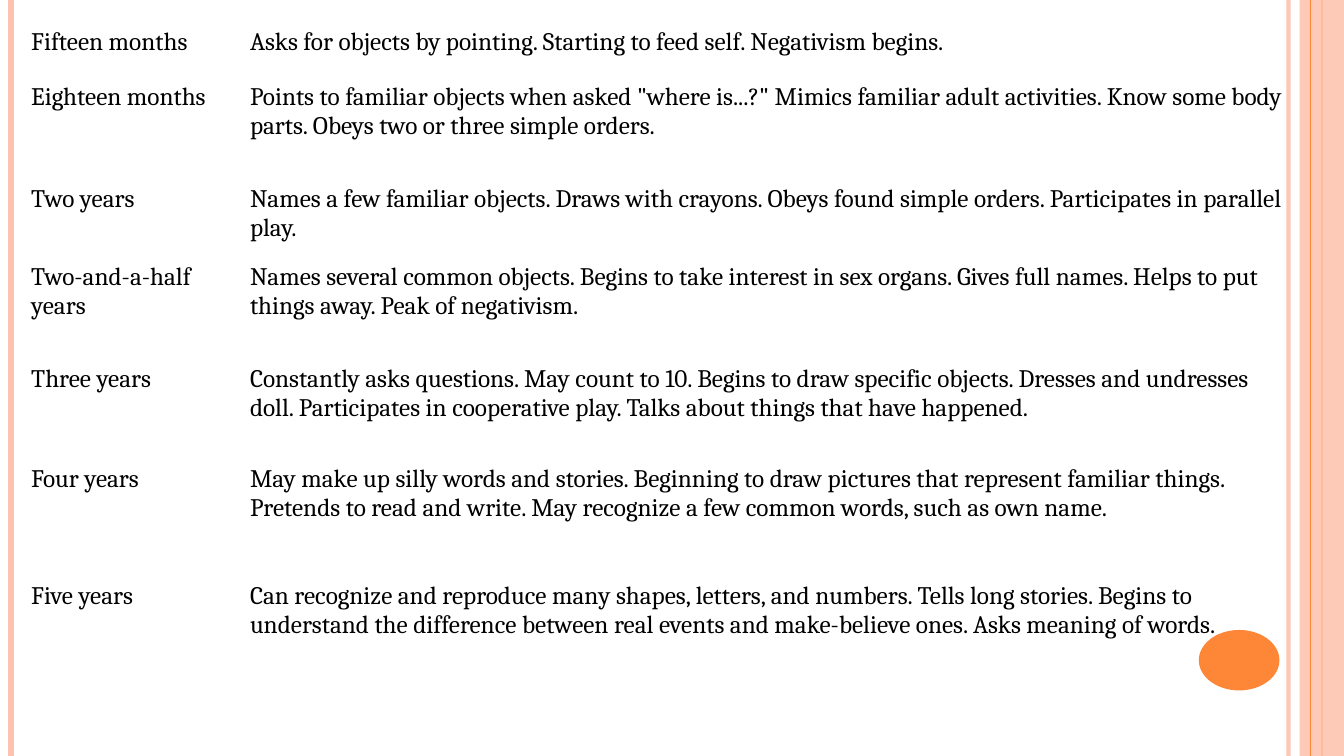
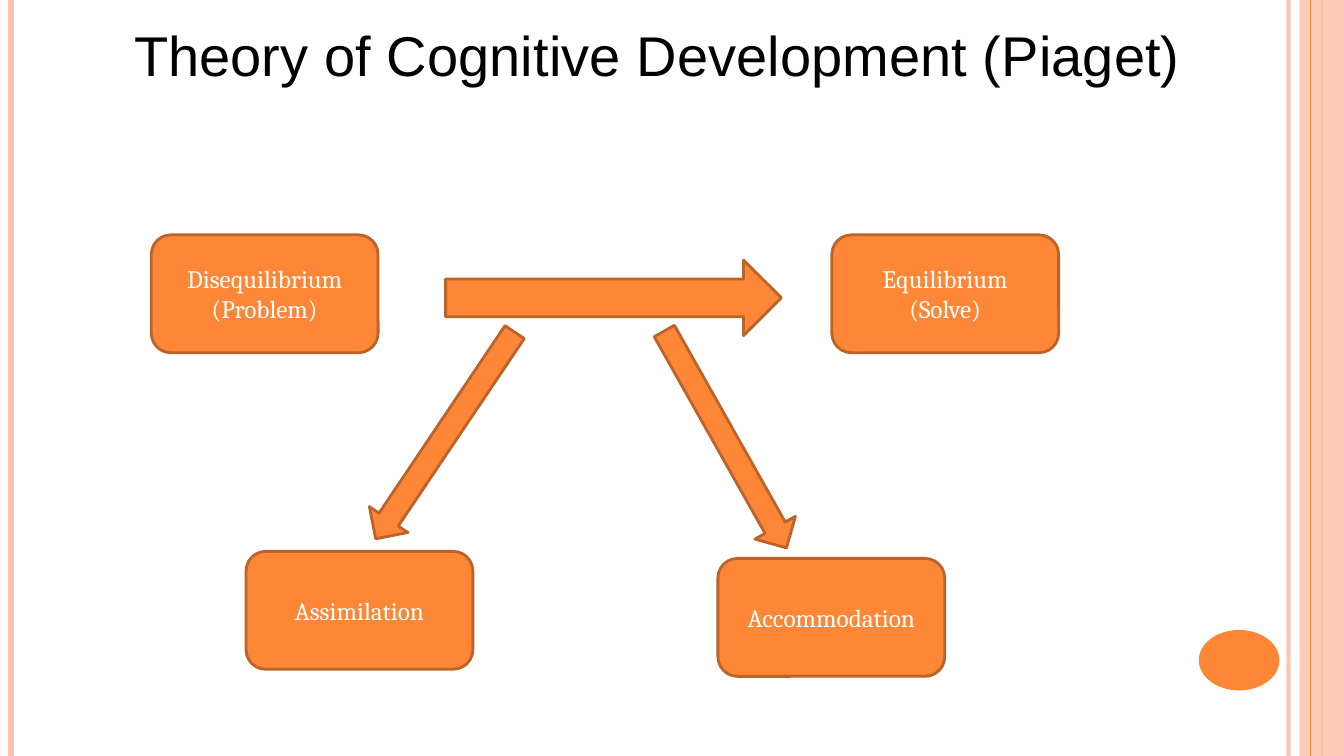
from lxml.etree import SubElement
from pptx import Presentation
from pptx.dml.color import RGBColor
from pptx.enum.shapes import MSO_CONNECTOR as Wire, MSO_SHAPE as Form
from pptx.enum.text import MSO_ANCHOR as Anchor, PP_ALIGN as Align
from pptx.oxml.ns import qn
from pptx.util import Pt

PX = 9144
WIDE, HIGH = 1333, 750
WHITE = RGBColor(0xFF, 0xFF, 0xFF)
BLACK = RGBColor(0x00, 0x00, 0x00)
PEACH = RGBColor(0xFE, 0xC3, 0xAE)
ORANGE = RGBColor(0xFE, 0x86, 0x37)
RUST = RGBColor(0xBC, 0x63, 0x29)
PLAIN = "{2D5ABB26-0587-4C30-8999-92F81FD0307C}"


def draw(slide, form, box, fill, edge=None):
    shape = slide.shapes.add_shape(form, *[n * PX for n in box])
    shape.shadow.inherit = False
    shape.fill.solid()
    shape.fill.fore_color.rgb = fill
    if edge is None:
        shape.line.fill.background()
    else:
        shape.line.color.rgb = edge
        shape.line.width = Pt(2)
    return shape


def write(para, text, color, size=18, face="Cambria"):
    run = para.add_run()
    run.text = text
    run.font.name = face
    run.font.size = Pt(size)
    run.font.color.rgb = color
    return run


deck = Presentation()
deck.slide_width = WIDE * PX
deck.slide_height = HIGH * PX
blank = deck.slide_layouts[6]
ages, theory = [deck.slides.add_slide(blank) for _ in range(2)]

rules = [
    (1278, PEACH, 3, 93),
    (11, PEACH, 4.5, 100),
    (1311, ORANGE, 1.5, 100),
    (1300, ORANGE, 0.75, 100),
]
for slide in (ages, theory):
    for x, color, width, alpha in rules:
        if x == 1300:
            band = draw(slide, Form.RECTANGLE, (1289, 0, WIDE - 1289, HIGH), PEACH)
            tint = band.fill._xPr.find(".//" + qn("a:srgbClr"))
            SubElement(tint, qn("a:alpha")).set("val", "87000")
        rule = slide.shapes.add_connector(Wire.STRAIGHT, x * PX, 0, x * PX, HIGH * PX)
        rule.line.color.rgb = color
        rule.line.width = Pt(width)
        props = rule._element.spPr
        if alpha < 100:
            tint = props.find(".//" + qn("a:srgbClr"))
            SubElement(tint, qn("a:alpha")).set("val", str(alpha * 1000))
        SubElement(props, qn("a:effectLst"))
    draw(slide, Form.OVAL, (1189, 625, 80, 60), ORANGE)

rows = [
    (54, "Fifteen months",
     "Asks for objects by pointing. Starting to feed self. Negativism begins."),
    (101, "Eighteen months",
     'Points to familiar objects when asked "where is...?" Mimics familiar adult '
     "activities. Know some body parts. Obeys two or three simple orders."),
    (78, "Two years",
     "Names a few familiar objects. Draws with crayons. Obeys found simple orders. "
     "Participates in parallel play."),
    (101, "Two-and-a-half years",
     "Names several common objects. Begins to take interest in sex organs. "
     "Gives full names. Helps to put things away. Peak of negativism."),
    (99, "Three years",
     "Constantly asks questions. May count to 10. Begins to draw specific objects. "
     "Dresses and undresses doll. Participates in cooperative play. "
     "Talks about things that have happened."),
    (116, "Four years",
     "May make up silly words and stories. Beginning to draw pictures that represent "
     "familiar things. Pretends to read and write. May recognize a few common words, "
     "such as own name."),
    (125, "Five years",
     "Can recognize and reproduce many shapes, letters, and numbers. "
     "Tells long stories. Begins to understand the difference between real events "
     "and make-believe ones. Asks meaning of words."),
]
cols = (217, 1050)
total = sum(row[0] for row in rows)
frame = ages.shapes.add_table(len(rows), len(cols), 25 * PX, 25 * PX,
                              sum(cols) * PX, total * PX)
table = frame.table
table.first_row = False
table.horz_banding = False
table._tbl.tblPr.find(qn("a:tableStyleId")).text = PLAIN
for col, width in zip(table.columns, cols):
    col.width = width * PX
for row, (height, *texts) in zip(table.rows, rows):
    row.height = height * PX
    for cell, text in zip(row.cells, texts):
        cell.fill.background()
        cell.margin_left = cell.margin_right = 6 * PX
        cell.margin_top = cell.margin_bottom = 3 * PX
        write(cell.text_frame.paragraphs[0], text, BLACK)

title = theory.shapes.add_textbox(133 * PX, 20 * PX, 1050 * PX, 67 * PX).text_frame
title.word_wrap = True
title.margin_left = title.margin_right = title.margin_top = title.margin_bottom = 0
head = write(title.paragraphs[0], "Theory of Cognitive Development (Piaget)",
             BLACK, 40, "Arial")
head._r.get_or_add_rPr().set("spc", "10")

arrows = [
    (442, 258, 333, 75, 0),
    (318, 409, 247, 46, 123.9),
    (596, 413, 247, 46, 60.6),
]
for *box, turn in arrows:
    draw(theory, Form.RIGHT_ARROW, box, ORANGE, RUST).rotation = turn

nodes = [
    (150, 233, ["Disequilibrium", "(Problem)"]),
    (825, 233, ["Equilibrium", "(Solve)"]),
    (244, 547, ["Assimilation"]),
    (712, 554, ["Accommodation"]),
]
for x, y, lines in nodes:
    node = draw(theory, Form.ROUNDED_RECTANGLE, (x, y, 225, 117), ORANGE, RUST)
    body = node.text_frame
    body.word_wrap = True
    body.vertical_anchor = Anchor.MIDDLE
    for i, line in enumerate(lines):
        para = body.add_paragraph() if i else body.paragraphs[0]
        para.alignment = Align.CENTER
        write(para, line, WHITE)

deck.save("out.pptx")
